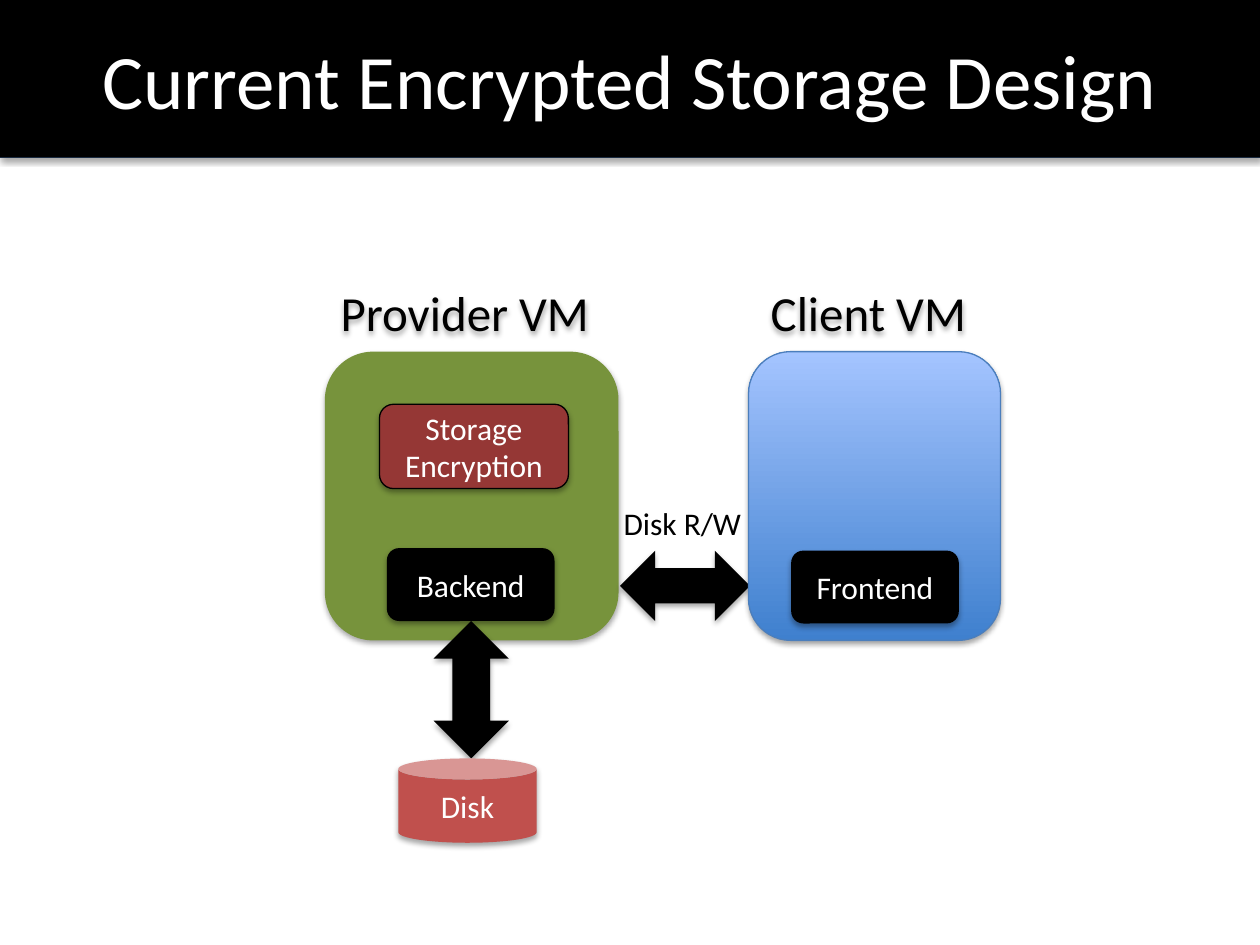
from lxml import etree
from pptx import Presentation
from pptx.dml.color import RGBColor
from pptx.enum import shapes, text
from pptx.oxml import ns
from pptx.util import Cm, Pt

BLACK = RGBColor(0x00, 0x00, 0x00)
WHITE = RGBColor(0xFF, 0xFF, 0xFF)
GREEN = RGBColor(0x77, 0x93, 0x3C)
RED = RGBColor(0xC0, 0x50, 0x4D)
MAROON = RGBColor(0x95, 0x37, 0x35)
DEEP = RGBColor(0x3F, 0x80, 0xCE)
PALE = RGBColor(0xA4, 0xC4, 0xFF)
EDGE = RGBColor(0x4B, 0x7E, 0xBC)

KIND = shapes.MSO_SHAPE
MID = text.MSO_ANCHOR.MIDDLE
CENTER = text.PP_ALIGN.CENTER


def add_shadow(shape):
    """Give a shape the soft shadow used all over this slide."""
    shape.shadow.inherit = False
    effects = shape.element.spPr.find(ns.qn("a:effectLst"))
    outer = etree.SubElement(effects, ns.qn("a:outerShdw"), blurRad="40000",
                             dist="23000", dir="5400000", rotWithShape="0")
    color = etree.SubElement(outer, ns.qn("a:srgbClr"), val=str(BLACK))
    etree.SubElement(color, ns.qn("a:alpha"), val="35000")


def set_text(shape, words, size, color, align=CENTER, anchor=MID, wrap=True):
    frame = shape.text_frame
    frame.text = words
    frame.word_wrap = wrap
    frame.vertical_anchor = anchor
    para = frame.paragraphs[0]
    para.alignment = align
    para.font.name = "Calibri"
    para.font.size = Pt(size)
    para.font.color.rgb = color


def add_box(slide, kind, place, fill=None, line=None, words=None):
    """Add a shadowed shape; without a fill colour it gets the blue gradient."""
    box = slide.shapes.add_shape(kind, *map(Cm, place))
    if fill is None:
        box.fill.gradient()
        box.fill.gradient_angle = 90
        for stop, color in zip(box.fill.gradient_stops, (DEEP, PALE)):
            stop.color.rgb = color
    else:
        box.fill.solid()
        box.fill.fore_color.rgb = fill
    if line is None:
        box.line.fill.background()
    else:
        box.line.color.rgb = line
        box.line.width = Pt(0.75)
    add_shadow(box)
    if words:
        set_text(box, words, 18, WHITE)
    return box


def add_label(slide, place, words):
    label = slide.shapes.add_textbox(*map(Cm, place))
    set_text(label, words, 28, BLACK)
    add_shadow(label)


def add_title(slide, words):
    bar = add_box(slide, KIND.RECTANGLE, (0, 0, 25.4, 3.18), line=EDGE)
    title = slide.shapes.title
    title.left, title.top, title.width, title.height = map(Cm, (0, 0, 25.4, 3.18))
    title.fill.solid()
    title.fill.fore_color.rgb = BLACK
    set_text(title, words, 44, WHITE)
    bar.element.addnext(title.element)  # title lies over the bar


def main():
    deck = Presentation()
    deck.slide_width, deck.slide_height = Cm(25.4), Cm(19.05)
    slide = deck.slides.add_slide(deck.slide_layouts[5])
    add_title(slide, "Current Encrypted Storage Design")

    # Provider machine
    rounded = KIND.ROUNDED_RECTANGLE
    add_box(slide, rounded, (6.55, 7.09, 5.92, 5.82), GREEN)
    add_label(slide, (6.55, 5.51, 5.64, 1.57), "Provider VM")
    add_box(slide, rounded, (7.8, 11.05, 3.38, 1.47), BLACK, words="Backend")

    # Data paths and disk
    add_box(slide, KIND.LEFT_RIGHT_ARROW, (12.5, 11.1, 2.62, 1.42), BLACK)
    note = slide.shapes.add_textbox(*map(Cm, (12.32, 10.03, 2.9, 1.02)))
    set_text(note, "Disk R/W", 18, BLACK, text.PP_ALIGN.LEFT,
             text.MSO_ANCHOR.TOP, wrap=False)
    note.text_frame.auto_size = text.MSO_AUTO_SIZE.SHAPE_TO_FIT_TEXT
    add_box(slide, KIND.UP_DOWN_ARROW, (8.74, 12.52, 1.52, 2.77), BLACK)
    add_box(slide, KIND.CAN, (8.03, 15.29, 2.79, 1.7), RED, words="Disk")

    # Client machine
    add_label(slide, (15.04, 5.51, 4.93, 1.57), "Client VM")
    add_box(slide, rounded, (15.09, 7.09, 5.08, 5.82), line=EDGE)
    add_box(slide, rounded, (15.95, 11.1, 3.38, 1.47), BLACK, words="Frontend")

    # Encryption inside the provider
    add_box(slide, rounded, (7.65, 8.15, 3.81, 1.7), MAROON, BLACK,
            "Storage Encryption")

    deck.save("out.pptx")


if __name__ == "__main__":
    main()
